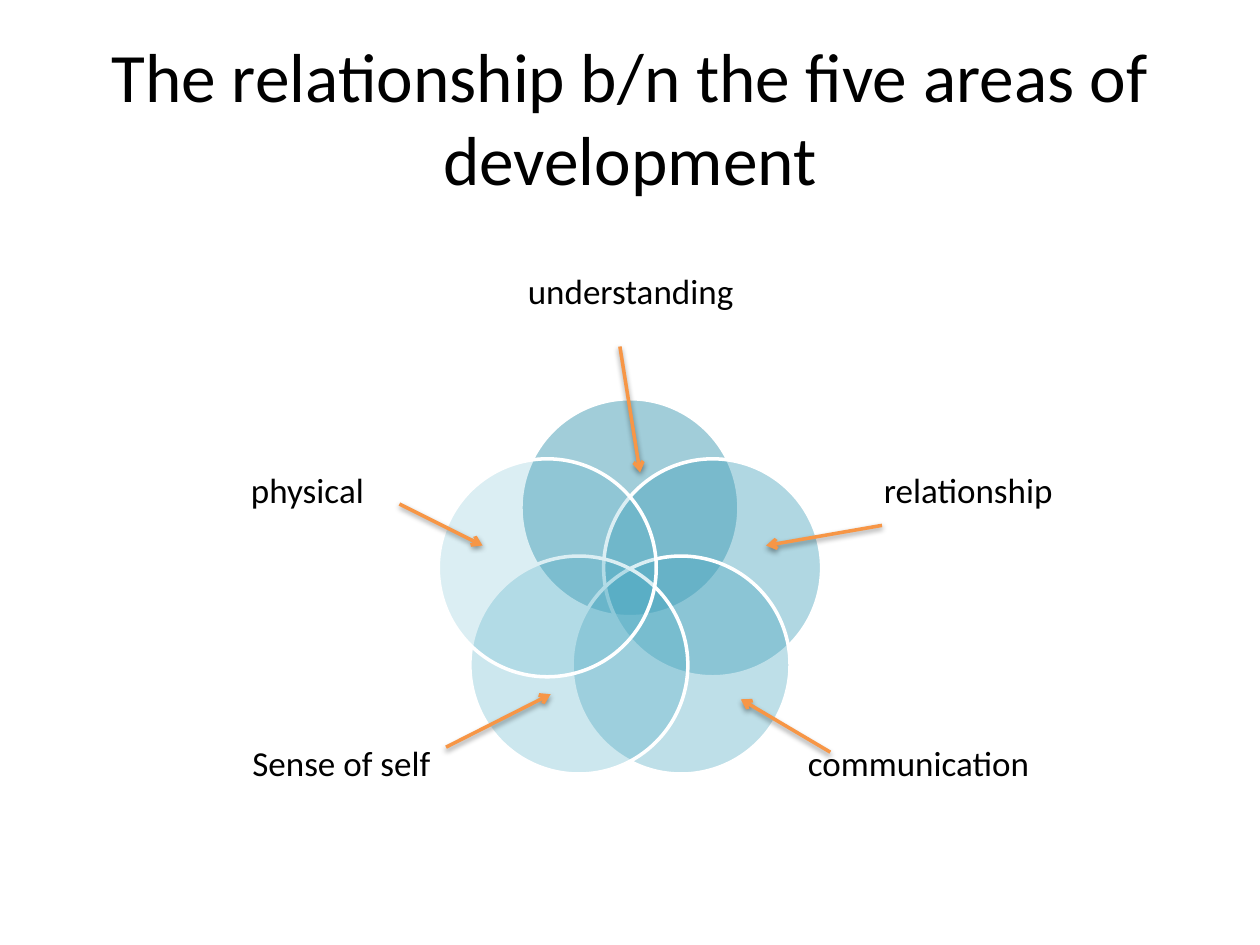
from math import cos, radians, sin

from lxml import etree
from pptx import Presentation
from pptx.dml.color import RGBColor
from pptx.enum.shapes import MSO_CONNECTOR, MSO_SHAPE
from pptx.enum.text import MSO_ANCHOR, MSO_AUTO_SIZE, PP_ALIGN
from pptx.oxml.ns import qn
from pptx.util import Inches, Pt

BLACK = RGBColor(0x00, 0x00, 0x00)
WHITE = RGBColor(0xFF, 0xFF, 0xFF)
ORANGE = RGBColor(0xF7, 0x96, 0x46)
OVAL = MSO_SHAPE.OVAL
LINE = MSO_CONNECTOR.STRAIGHT
MIDDLE = MSO_ANCHOR.MIDDLE
FIXED = MSO_AUTO_SIZE.NONE
CENTER = PP_ALIGN.CENTER

FRAME = {"word_wrap": True, "auto_size": FIXED, "vertical_anchor": MIDDLE}
BARE = {"margin_left": 0, "margin_right": 0, "margin_top": 0,
        "margin_bottom": 0}
SIZE = 1.73    # circle diameter
REACH = 0.69   # from the middle of the ring to each circle's centre

# Clockwise from the top: circle colour, opacity in percent
CIRCLES = [
    (RGBColor(0x44, 0x9C, 0xB4), 50),
    (RGBColor(0x44, 0xA1, 0xBB), 42),
    (RGBColor(0x47, 0xA5, 0xBF), 35),
    (RGBColor(0x4A, 0xA9, 0xC2), 28),
    (RGBColor(0x4D, 0xAC, 0xC6), 20),
]
# Clockwise from the top, within the diagram box:
# label, left, top, width, height, left margin
LABELS = [
    ("understanding", 3.5, 0, 2.01, 1.16, 0),
    ("relationship", 6.16, 1.53, 1.8, 1.26, 0.25),
    ("communication", 5.89, 3.69, 1.8, 1.26, 0),
    ("Sense of self", 1.31, 3.69, 1.8, 1.26, 0),
    ("physical", 1.04, 1.53, 1.8, 1.26, 0),
]
# Start and end of each arrow, within the diagram box
ARROWS = [
    (2.67, 2.25, 3.33, 2.58),
    (4.42, 1, 4.58, 2),
    (6.5, 2.42, 5.58, 2.58),
    (6.09, 4.22, 5.38, 3.8),
    (3.04, 4.18, 3.87, 3.76),
]


def apply(item, values):
    for name, value in values.items():
        setattr(item, name, value)


def write(shape, text, size, frame, para):
    """Put one formatted paragraph into a shape."""
    apply(shape.text_frame, {**FRAME, **frame})
    line = shape.text_frame.paragraphs[0]
    apply(line, {"alignment": CENTER, **para})
    run = line.add_run()
    run.text = text
    apply(run.font, {"name": "Calibri", "size": Pt(size)})
    run.font.color.rgb = BLACK


def add_title(slide, box, text):
    title = slide.shapes.title
    names = ("left", "top", "width", "height")
    apply(title, dict(zip(names, map(Inches, box))))
    write(title, text, 39.6, {}, {})


def add_circle(group, x, y, color, alpha):
    """Add a see-through circle centred on x, y."""
    disc = group.shapes.add_shape(OVAL, Inches(x - SIZE / 2),
                                  Inches(y - SIZE / 2),
                                  Inches(SIZE), Inches(SIZE))
    disc.shadow.inherit = False
    disc.fill.solid()
    disc.fill.fore_color.rgb = color
    tint = disc.fill._xPr.find(qn("a:solidFill"))[0]
    etree.SubElement(tint, qn("a:alpha"), val=str(alpha * 1000))
    disc.line.color.rgb = WHITE
    disc.line.width = Pt(2)


def add_label(group, left, top, label):
    text, x, y, width, height, margin = label
    box = group.shapes.add_textbox(Inches(left + x), Inches(top + y),
                                   Inches(width), Inches(height))
    write(box, text, 20, {**BARE, "margin_left": Inches(margin)},
          {"line_spacing": 0.9})


def add_arrow(slide, left, top, ends):
    x1, y1, x2, y2 = ends
    arrow = slide.shapes.add_connector(
        LINE, Inches(left + x1), Inches(top + y1),
        Inches(left + x2), Inches(top + y2))
    arrow.line.color.rgb = ORANGE
    arrow.line.width = Pt(2)
    etree.SubElement(arrow.line._get_or_add_ln(), qn("a:tailEnd"),
                     type="arrow")
    effects = etree.SubElement(arrow._element.spPr, qn("a:effectLst"))
    shadow = etree.SubElement(effects, qn("a:outerShdw"), blurRad="40000",
                              dist="20000", dir="5400000", rotWithShape="0")
    shade = etree.SubElement(shadow, qn("a:srgbClr"), val=str(BLACK))
    etree.SubElement(shade, qn("a:alpha"), val="38000")


def add_diagram(slide, box):
    """Add the ring of circles with its labels and arrows."""
    left, top, width, height = box
    mid_x, mid_y = left + width / 2, top + height * 0.6
    group = slide.shapes.add_group_shape()
    step = 360 / len(CIRCLES)
    for i, (circle, label) in enumerate(zip(CIRCLES, LABELS)):
        angle = radians(i * step)
        add_circle(group, mid_x + REACH * sin(angle),
                   mid_y - REACH * cos(angle), *circle)
        add_label(group, left, top, label)
    for ends in ARROWS:
        add_arrow(slide, left, top, ends)


def main():
    deck = Presentation()
    apply(deck, {"slide_width": Inches(10), "slide_height": Inches(7.5)})
    slide = deck.slides.add_slide(deck.slide_layouts[5])
    add_title(slide, (0.5, 0.3, 9, 1.25),
              "The relationship b/n the five areas of development")
    add_diagram(slide, (0.5, 1.75, 9, 4.95))
    deck.save("out.pptx")


if __name__ == "__main__":
    main()
